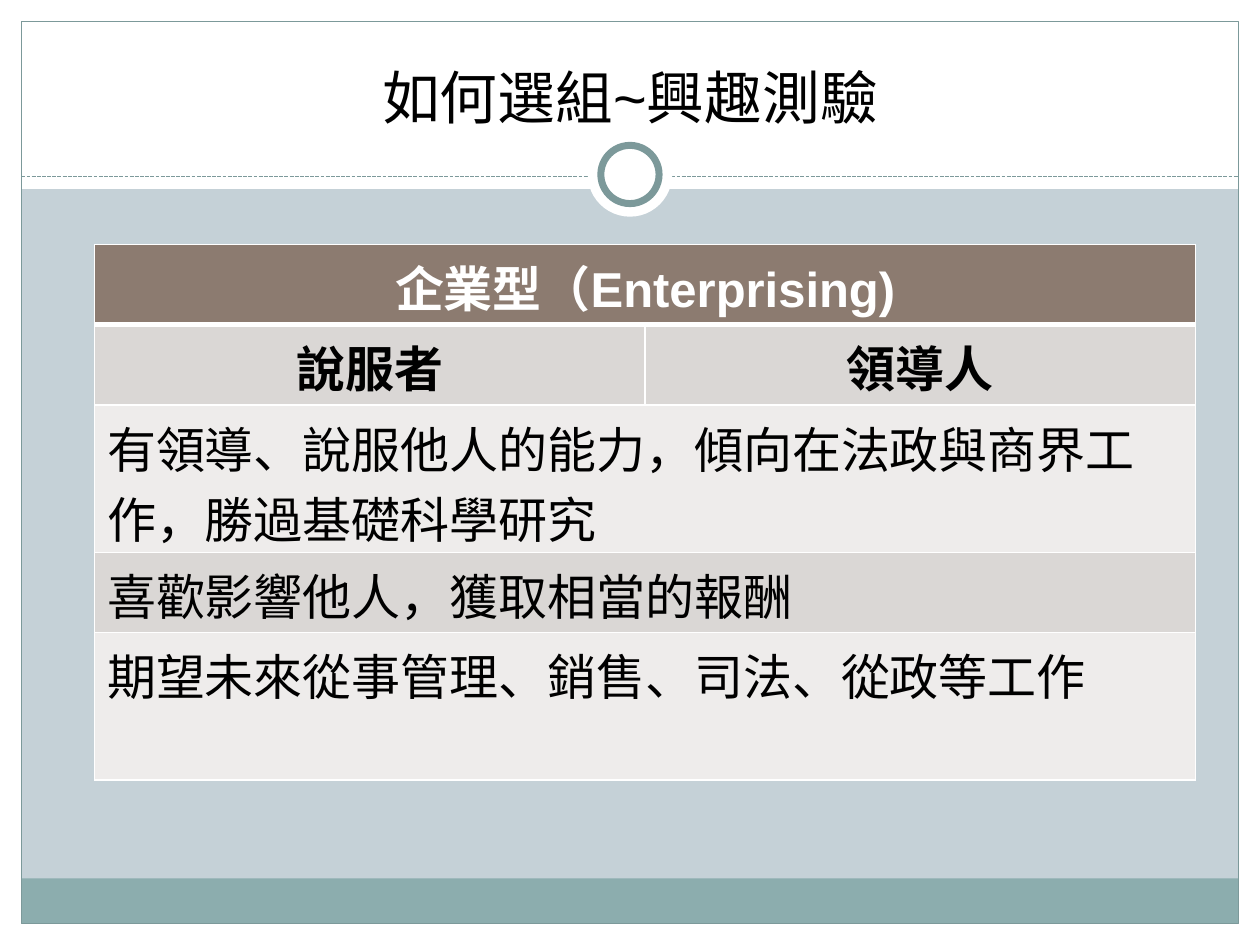
import dataclasses

import lxml.etree
import pptx
import pptx.dml.color
import pptx.enum.dml
import pptx.enum.shapes
import pptx.enum.text
import pptx.oxml.ns
import pptx.util

COLORS = {
    "background": "C5D1D7", "white": "FFFFFF", "black": "000000",
    "footer": "8CADAE", "outline": "7C999A",
    "header": "8C7B70", "dark_band": "DAD7D5", "light_band": "EEECEB",
}
FONT = "Arial"
SHAPES = pptx.enum.shapes.MSO_SHAPE
CENTER = pptx.enum.text.PP_ALIGN.CENTER
LEFT = pptx.enum.text.PP_ALIGN.LEFT

TITLE = "如何選組~興趣測驗"
# Each row: cell texts, fill, height in shares of the table, bold, alignment
ROWS = [
    (["企業型（Enterprising)"], "header", 0.15, True, CENTER),
    (["說服者", "領導人"], "dark_band", 0.15, True, CENTER),
    (["有領導、說服他人的能力，傾向在法政與商界工作，勝過基礎科學研究"],
     "light_band", 0.275, False, LEFT),
    (["喜歡影響他人，獲取相當的報酬"], "dark_band", 0.15, False, LEFT),
    (["期望未來從事管理、銷售、司法、從政等工作"], "light_band", 0.275, False, LEFT),
]


@dataclasses.dataclass
class Box:
    left: float
    top: float
    width: float
    height: float

    def inner_box(self, left, top, width, height):
        """Return an inner box given in shares of this one."""
        return Box(self.left + left * self.width, self.top + top * self.height,
                   width * self.width, height * self.height)

    def centered_square(self, size):
        return Box(self.left + (self.width - size) / 2,
                   self.top + (self.height - size) / 2, size, size)

    def emu(self):
        return [pptx.util.Inches(length) for length in dataclasses.astuple(self)]


def rgb(name):
    return pptx.dml.color.RGBColor.from_string(COLORS[name])


def add_plain_shape(slide, kind, box, fill=None, line=None, line_width=0.75):
    shape = slide.shapes.add_shape(kind, *box.emu())
    shape.shadow.inherit = False
    if fill:
        shape.fill.solid()
        shape.fill.fore_color.rgb = rgb(fill)
    else:
        shape.fill.background()
    if line:
        shape.line.color.rgb = rgb(line)
        shape.line.width = pptx.util.Pt(line_width)
    else:
        shape.line.fill.background()


def format_text(paragraph, size, color, bold, alignment):
    paragraph.alignment = alignment
    for run in paragraph.runs:
        run.font.name = FONT
        run.font.size = pptx.util.Pt(size)
        run.font.bold = bold
        run.font.color.rgb = rgb(color)


def add_frame(slide, box):
    """Add the white margins, the footer band and the outline."""
    margin = 0.17
    side, edge = margin / box.width, margin / box.height
    for band in [(0, 1 - edge, 1, edge), (0, 0, 1, 0.2),
                 (0, 0, side, 1), (1 - side, 0, side, 1)]:
        add_plain_shape(slide, SHAPES.RECTANGLE, box.inner_box(*band), "white")
    inner = box.inner_box(side, edge, 1 - 2 * side, 1 - 2 * edge)
    add_plain_shape(slide, SHAPES.RECTANGLE, inner.inner_box(0, 0.95, 1, 0.05), "footer")
    add_plain_shape(slide, SHAPES.RECTANGLE, inner, line="outline")


def add_divider(slide, box):
    """Add the dashed line across the box and the ring at its centre."""
    left, top, width, height = box.emu()
    line_top = top + round(height * 0.52)
    line = slide.shapes.add_connector(
        pptx.enum.shapes.MSO_CONNECTOR.STRAIGHT, left, line_top, left + width, line_top)
    line.line.color.rgb = rgb("outline")
    line.line.width = pptx.util.Pt(0.75)
    line.line.dash_style = pptx.enum.dml.MSO_LINE.SQUARE_DOT
    lxml.etree.SubElement(line._element.spPr, pptx.oxml.ns.qn("a:effectLst"))
    add_plain_shape(slide, SHAPES.OVAL, box.centered_square(box.height), "white")
    add_plain_shape(slide, SHAPES.OVAL, box.centered_square(0.69 * box.height),
                    "white", "outline", 4)


def add_title(slide, box):
    text_frame = slide.shapes.add_textbox(*box.emu()).text_frame
    text_frame.word_wrap = True
    text_frame.vertical_anchor = pptx.enum.text.MSO_ANCHOR.BOTTOM
    text_frame.text = TITLE
    format_text(text_frame.paragraphs[0], 33, "black", False, CENTER)


def set_borders(cell, bottom_width):
    properties = cell._tc.get_or_add_tcPr()
    widths = {"lnL": 1, "lnR": 1, "lnT": 1, "lnB": bottom_width}
    for index, (side, width) in enumerate(widths.items()):
        border = lxml.etree.Element(pptx.oxml.ns.qn(f"a:{side}"), w=str(pptx.util.Pt(width)))
        fill = lxml.etree.SubElement(border, pptx.oxml.ns.qn("a:solidFill"))
        lxml.etree.SubElement(fill, pptx.oxml.ns.qn("a:srgbClr"), val=COLORS["white"])
        properties.insert(index, border)


def add_interest_table(slide, box):
    table = slide.shapes.add_table(len(ROWS), 2, *box.emu()).table
    for index, (texts, fill, share, bold, alignment) in enumerate(ROWS):
        table.rows[index].height = pptx.util.Inches(share * box.height)
        if len(texts) == 1:
            table.cell(index, 0).merge(table.cell(index, 1))
        is_header = fill == "header"
        for column in range(2):
            cell = table.cell(index, column)
            cell.fill.solid()
            cell.fill.fore_color.rgb = rgb(fill)
            set_borders(cell, 3 if is_header else 1)
        for column, text in enumerate(texts):
            text_frame = table.cell(index, column).text_frame
            text_frame.text = text
            format_text(text_frame.paragraphs[0], 28,
                        "white" if is_header else "black", bold, alignment)


def main():
    presentation = pptx.Presentation()
    page = Box(0, 0, 10, 7.5)
    presentation.slide_width = pptx.util.Inches(page.width)
    presentation.slide_height = pptx.util.Inches(page.height)
    slide = presentation.slides.add_slide(presentation.slide_layouts[6])
    slide.background.fill.solid()
    slide.background.fill.fore_color.rgb = rgb("background")

    add_frame(slide, page)
    content = page.inner_box(0.02, 0.02, 0.96, 0.96)
    add_divider(slide, Box(0.17, 1.05, 9.66, 0.67))
    add_title(slide, content.inner_box(0.01, 0.01, 0.98, 0.12))
    add_interest_table(slide, Box(0.75, 1.94, 8.74, 4.25))
    presentation.save("out.pptx")


if __name__ == "__main__":
    main()
